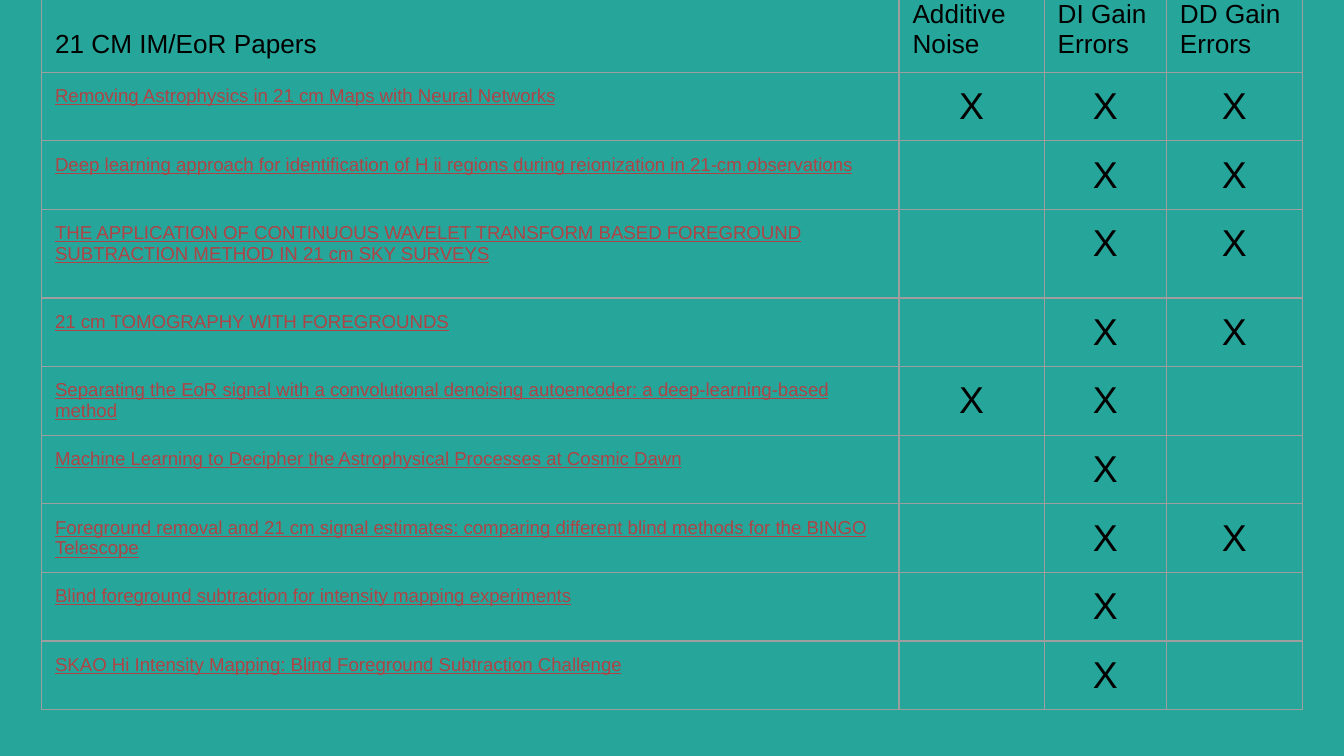
from lxml.etree import SubElement
from pptx import Presentation
from pptx.dml.color import RGBColor
from pptx.enum.text import MSO_ANCHOR, PP_ALIGN
from pptx.oxml.ns import qn
from pptx.util import Inches, Pt

BACKGROUND = "26A69A"
BORDER = "9E9E9E"
BLACK = "000000"
LINK_RED = "AF4345"

COLUMN_WIDTHS = [6.38, 1.08, 0.91, 1.01]
HEADER_HEIGHT = 0.63
ROW_HEIGHT = 0.51
TALL_ROW_HEIGHT = 0.66
TALL_ROW = 3
HEADERS = ["21 CM IM/EoR Papers", "Additive Noise", "DI Gain Errors", "DD Gain Errors"]
PAPERS = [
    ("Removing Astrophysics in 21 cm Maps with Neural Networks", "XXX"),
    ("Deep learning approach for identification of H ii regions during "
     "reionization in 21-cm observations", " XX"),
    ("THE APPLICATION OF CONTINUOUS WAVELET TRANSFORM BASED FOREGROUND "
     "SUBTRACTION METHOD IN 21 cm SKY SURVEYS", " XX"),
    ("21 cm TOMOGRAPHY WITH FOREGROUNDS", " XX"),
    ("Separating the EoR signal with a convolutional denoising autoencoder: "
     "a deep-learning-based method", "XX "),
    ("Machine Learning to Decipher the Astrophysical Processes at Cosmic Dawn", " X "),
    ("Foreground removal and 21 cm signal estimates: comparing different "
     "blind methods for the BINGO Telescope", " XX"),
    ("Blind foreground subtraction for intensity mapping experiments", " X "),
    ("SKAO Hi Intensity Mapping: Blind Foreground Subtraction Challenge", " X "),
]


def color(hex_string):
    return RGBColor.from_string(hex_string)


def add_borders(cell):
    properties = cell._tc.get_or_add_tcPr()
    for side in ("a:lnL", "a:lnR", "a:lnT", "a:lnB"):
        line = SubElement(properties, qn(side), w=str(Pt(0.75)))
        fill = SubElement(line, qn("a:solidFill"))
        SubElement(fill, qn("a:srgbClr"), val=BORDER)


def format_cell(cell):
    cell.margin_left = cell.margin_right = Inches(0.1)
    cell.margin_top = cell.margin_bottom = Inches(0.1)
    add_borders(cell)
    cell.fill.background()


def write_cell(cell, text, size, hex_color=BLACK, underline=False, alignment=PP_ALIGN.LEFT):
    paragraph = cell.text_frame.paragraphs[0]
    paragraph.alignment = alignment
    run = paragraph.add_run()
    run.text = text
    run.font.name = "Arial"
    run.font.size = Pt(size)
    run.font.color.rgb = color(hex_color)
    run.font.underline = underline


def add_paper_table(slide):
    heights = [HEADER_HEIGHT] + [ROW_HEIGHT] * len(PAPERS)
    heights[TALL_ROW] = TALL_ROW_HEIGHT
    shape = slide.shapes.add_table(
        len(heights), len(COLUMN_WIDTHS), Inches(0.31), Inches(-0.1),
        Inches(sum(COLUMN_WIDTHS)), Inches(sum(heights)))
    table = shape.table
    table.first_row = False
    table.horz_banding = False
    for column, width in zip(table.columns, COLUMN_WIDTHS):
        column.width = Inches(width)
    for row, height in zip(table.rows, heights):
        row.height = Inches(height)
    for cell in table.iter_cells():
        format_cell(cell)
    return table


def fill_header(table):
    for column, header in enumerate(HEADERS):
        cell = table.cell(0, column)
        cell.vertical_anchor = MSO_ANCHOR.BOTTOM
        write_cell(cell, header, 14)


def fill_papers(table):
    for row, (title, marks) in enumerate(PAPERS, start=1):
        write_cell(table.cell(row, 0), title, 10, LINK_RED, underline=True)
        for column, mark in enumerate(marks, start=1):
            if mark == "X":
                write_cell(table.cell(row, column), mark, 20, alignment=PP_ALIGN.CENTER)


def main():
    presentation = Presentation()
    presentation.slide_width = Inches(10)
    presentation.slide_height = presentation.slide_width * 9 // 16
    slide = presentation.slides.add_slide(presentation.slide_layouts[6])
    slide.background.fill.solid()
    slide.background.fill.fore_color.rgb = color(BACKGROUND)
    table = add_paper_table(slide)
    fill_header(table)
    fill_papers(table)
    presentation.save("out.pptx")


if __name__ == "__main__":
    main()
